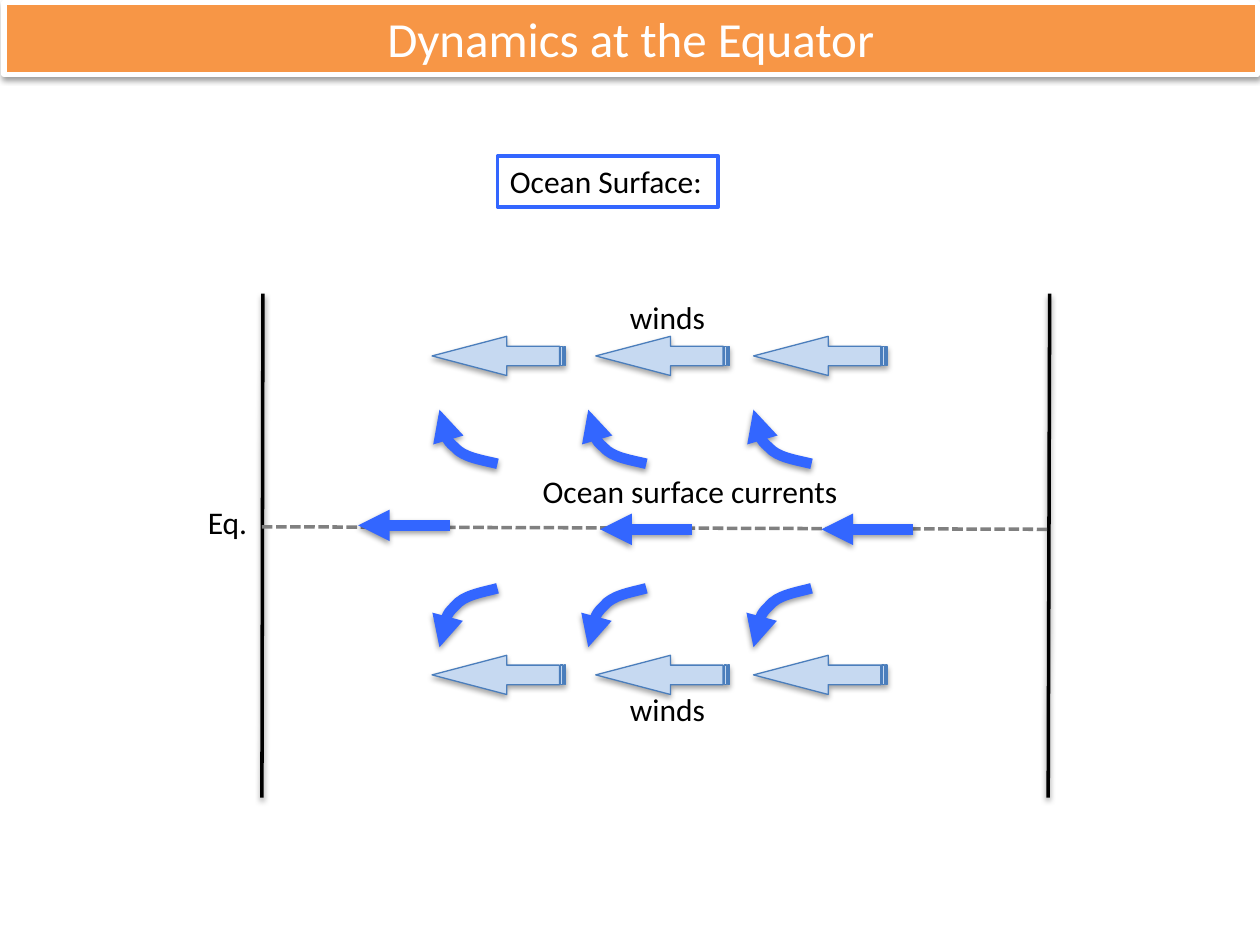
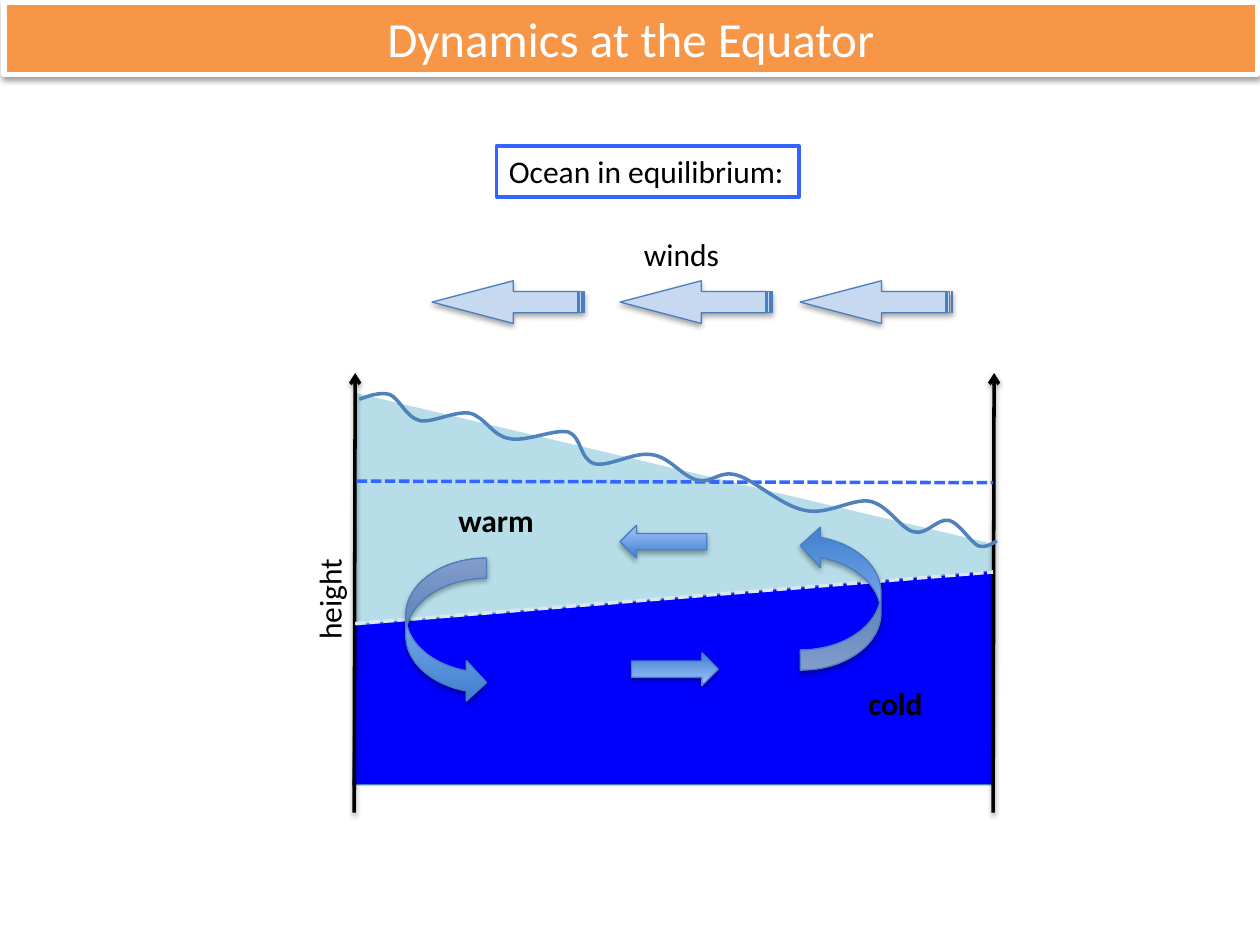
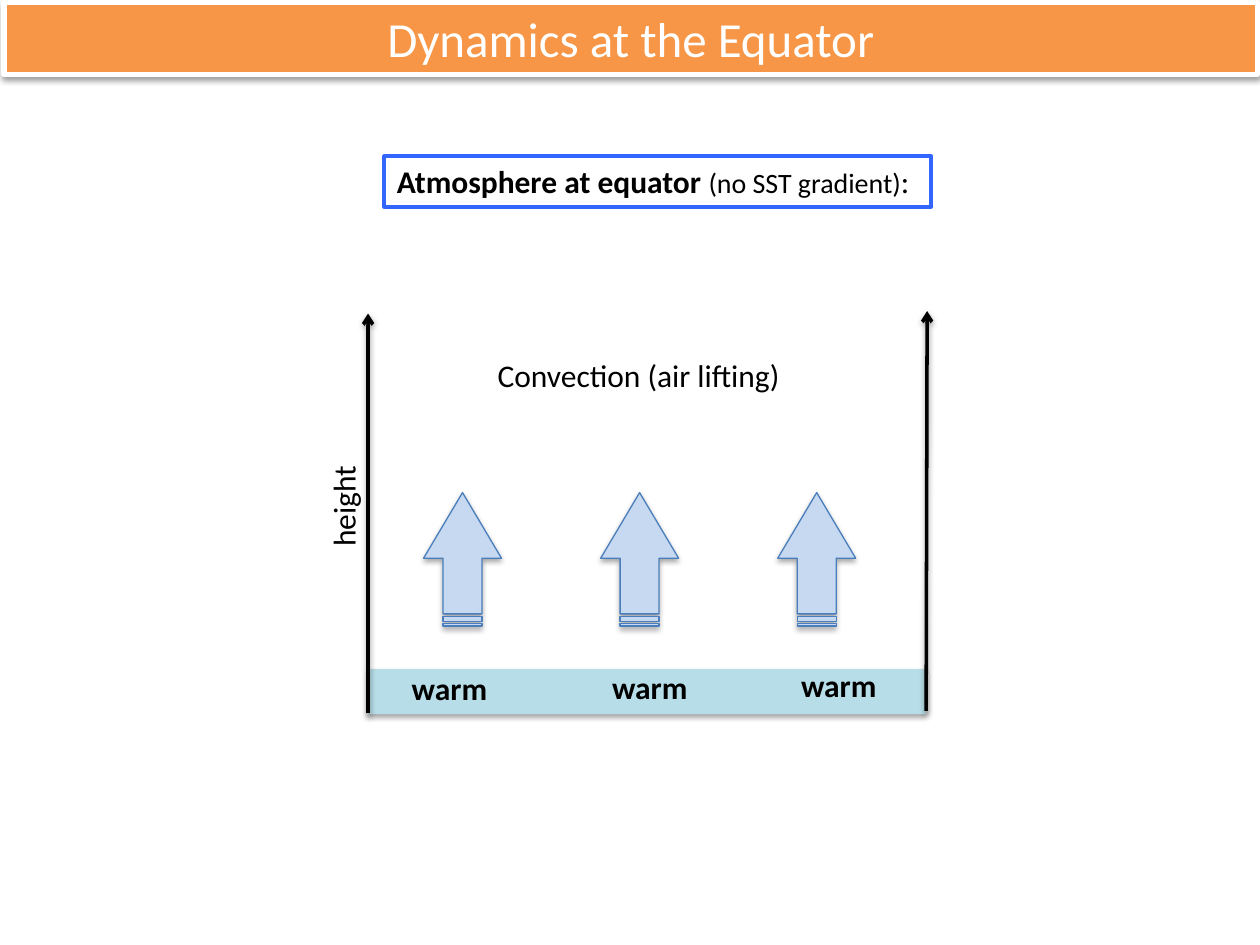
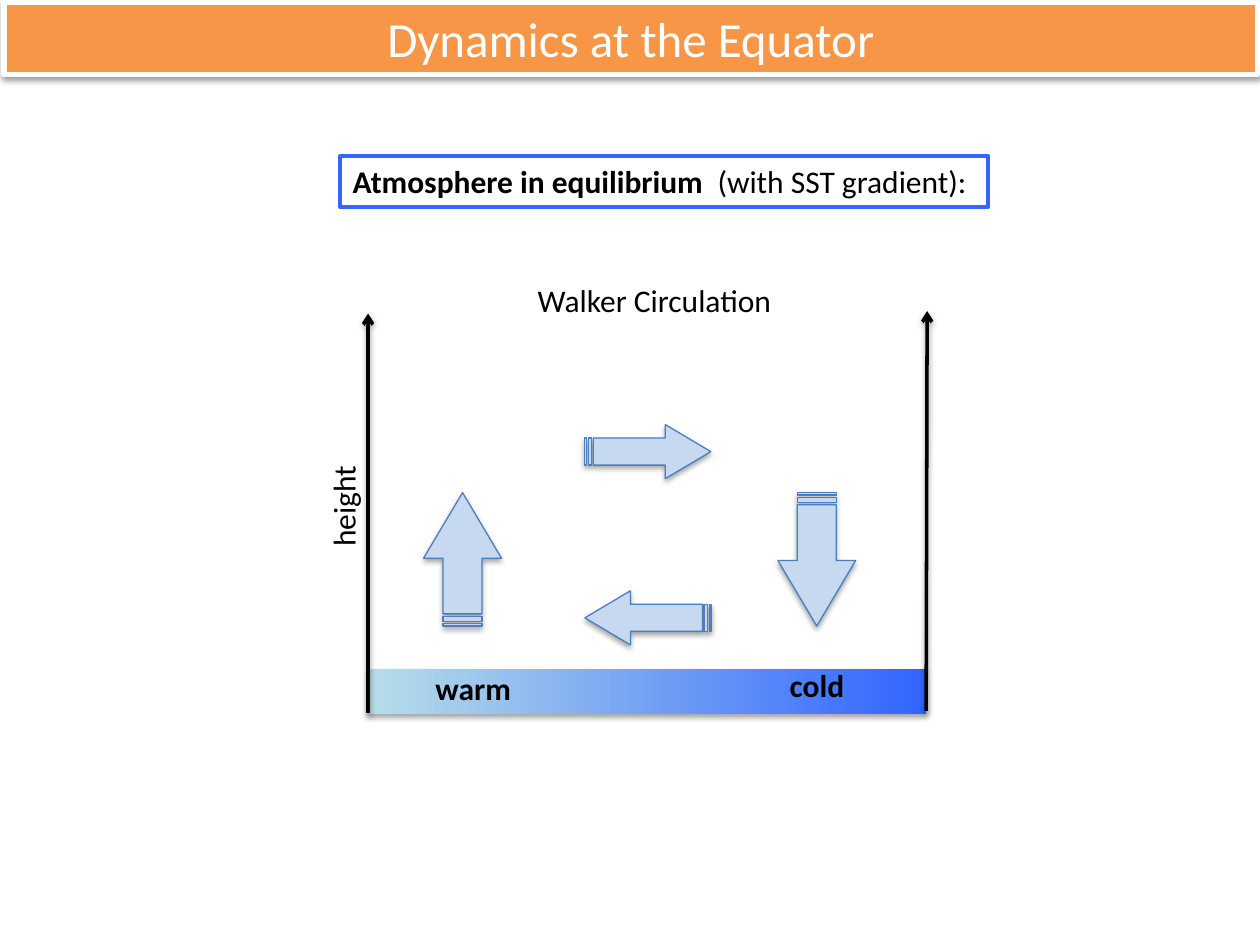
import dataclasses
import math

import lxml.etree
import pptx
import pptx.dml.color
import pptx.enum.dml
import pptx.enum.shapes
import pptx.enum.text
import pptx.oxml.ns
import pptx.util


@dataclasses.dataclass(frozen=True)
class Theme:
    font: str = "Calibri"
    title_size: int = 28
    text_size: int = 18
    small_size: int = 16
    black: str = "000000"
    white: str = "FFFFFF"
    banner: str = "F79646"
    current: str = "3366FF"
    wind: str = "C6D9F1"
    edge: str = "4B7EBC"
    wave: str = "4F81BD"
    equator: str = "808080"
    thermocline: str = "DCE6F2"
    warm: str = "B7DEE8"
    cold: str = "0000FF"
    flow_dark: str = "3F80CE"
    flow_light: str = "A4C4FF"


theme = Theme()
rgb = pptx.dml.color.RGBColor.from_string
qn = pptx.oxml.ns.qn
cm = pptx.util.Cm
preset = pptx.enum.shapes.MSO_SHAPE
straight = pptx.enum.shapes.MSO_CONNECTOR.STRAIGHT
dashed = pptx.enum.dml.MSO_LINE.SQUARE_DOT
left_aligned = pptx.enum.text.PP_ALIGN.LEFT
centred = pptx.enum.text.PP_ALIGN.CENTER


def dress(part, fill=None, angle=0, end=1, line=None, width=0.75, dash=None,
          head=None, tail=None, shadow=None):
    if isinstance(fill, tuple):
        part.fill.gradient()
        part.fill.gradient_angle = angle
        for stop, color, position in zip(part.fill.gradient_stops, fill, (0, end)):
            stop.color.rgb = rgb(color)
            stop.position = position
    elif fill:
        part.fill.solid()
        part.fill.fore_color.rgb = rgb(fill)
    elif hasattr(part, "fill"):
        part.fill.background()
    if line:
        part.line.color.rgb = rgb(line)
        part.line.width = pptx.util.Pt(width)
        if dash:
            part.line.dash_style = dash
    else:
        part.line.fill.background()
    properties = part.element.spPr
    for tag, tip in (("a:headEnd", head), ("a:tailEnd", tail)):
        if tip:
            lxml.etree.SubElement(properties.find(qn("a:ln")), qn(tag), type=tip)
    effects = lxml.etree.SubElement(properties, qn("a:effectLst"))
    if shadow:
        distance, opacity = shadow
        cast = lxml.etree.SubElement(
            effects, qn("a:outerShdw"), blurRad="40000", dist=str(distance),
            dir="5400000", rotWithShape="0")
        tint = lxml.etree.SubElement(cast, qn("a:srgbClr"), val=theme.black)
        lxml.etree.SubElement(tint, qn("a:alpha"), val=str(opacity * 1000))


def write(frame, runs, color=theme.black, align=left_aligned, wrap=False):
    layout = {
        "word_wrap": wrap,
        "auto_size": pptx.enum.text.MSO_AUTO_SIZE.SHAPE_TO_FIT_TEXT,
        "vertical_anchor": pptx.enum.text.MSO_ANCHOR.TOP,
    }
    for name, value in layout.items():
        setattr(frame, name, value)
    paragraph = frame.paragraphs[0]
    paragraph.alignment = align
    for words, size, bold in runs:
        run = paragraph.add_run()
        run.text = words
        run.font.color.rgb = rgb(color)
        for name, value in {"name": theme.font, "size": pptx.util.Pt(size), "bold": bold}.items():
            setattr(run.font, name, value)


line_shadow = (20000, 38)
shape_shadow = (23000, 35)
wall_look = {"line": theme.black, "width": 2, "shadow": line_shadow}
axis_look = {**wall_look, "head": "arrow"}
current_look = {"line": theme.current, "width": 6, "tail": "triangle", "shadow": line_shadow}
wind_look = {"fill": theme.wind, "line": theme.edge, "shadow": shape_shadow}
flow_look = {"fill": (theme.flow_dark, theme.flow_light), "angle": 90,
             "line": theme.edge, "shadow": shape_shadow}

deck = pptx.Presentation()
deck.slide_width = cm(25.4)
deck.slide_height = cm(19.05)

headings = [
    (10.03, 3.15, 4.45, [("Ocean Surface:", theme.text_size, False)]),
    (10.01, 2.95, 6.1, [("Ocean in equilibrium:", theme.text_size, False)]),
    (7.75, 3.15, 11.02, [("Atmosphere at equator ", theme.text_size, True),
                         ("(no SST gradient)", theme.small_size, False),
                         (":", theme.text_size, False)]),
    (6.86, 3.15, 13.06, [("Atmosphere in equilibrium ", theme.text_size, True),
                         (" (with SST gradient):", theme.text_size, False)]),
]
for left, top, width, runs in headings:
    slide = deck.slides.add_slide(deck.slide_layouts[6])
    heading = slide.shapes.add_shape(preset.RECTANGLE, cm(left), cm(top), cm(width), cm(1.02))
    dress(heading, line=theme.current, width=2.25)
    write(heading.text_frame, runs)
surface, ocean, convection, walker = deck.slides

layers = [
    ([(7.16, 7.92), (20.04, 10.97), (20.02, 11.51), (7.16, 12.6)], {"fill": theme.warm}),
    ([(7.16, 12.6), (20.02, 11.51), (20.02, 15.82), (7.11, 15.82)],
     {"fill": theme.cold, "line": theme.edge}),
]
for corners, look in layers:
    outline = [(cm(x), cm(y)) for x, y in corners]
    builder = ocean.shapes.build_freeform(*outline[0])
    builder.add_line_segments(outline[1:], close=True)
    dress(builder.convert_to_shape(), **look)

for slide, sea_fill in ((convection, theme.warm), (walker, (theme.warm, theme.current))):
    sea = slide.shapes.add_shape(preset.RECTANGLE, cm(7.42), cm(13.49), cm(11.25), cm(0.91))
    dress(sea, fill=sea_fill, end=0.99, shadow=shape_shadow)

lines = [
    (surface, 5.3, 5.92, 5.28, 16.08, wall_look),
    (surface, 21.16, 5.92, 21.13, 16.08, wall_look),
    (surface, 5.28, 10.62, 21.11, 10.67, {"line": theme.equator, "width": 2, "dash": dashed}),
    (ocean, 7.16, 7.52, 7.14, 16.38, axis_look),
    (ocean, 20.04, 7.52, 20.02, 16.38, axis_look),
    (ocean, 7.19, 9.7, 20.02, 9.73, {"line": theme.current, "width": 2, "dash": dashed}),
    (ocean, 7.16, 12.57, 20.02, 11.53, {"line": theme.thermocline, "width": 2, "dash": dashed}),
]
for slide in (convection, walker):
    lines += [(slide, 7.42, 6.32, 7.42, 14.38, axis_look),
              (slide, 18.69, 6.27, 18.67, 14.33, axis_look)]
for start, level in ((9.07, 10.59), (13.95, 10.67), (18.41, 10.67)):
    lines.append((surface, start, level, start - 1.85, level, current_look))
for slide, x1, y1, x2, y2, look in lines:
    dress(slide.shapes.add_connector(straight, cm(x1), cm(y1), cm(x2), cm(y2)), **look)

bend = [(0, 0), (-0.33, 0.08), (-0.69, 0.13), (-0.86, 0.33), (-1.07, 0.51), (-1.09, 0.94),
        (-1.14, 1.07), (-1.19, 1.22), (-1.19, 1.17), (-1.17, 1.09)]
curves = []
for level, stretch in ((9.35, -1), (11.86, 1.09)):
    for start in (10.03, 13.03, 16.36):
        points = [(start + dx, level + stretch * dy) for dx, dy in bend]
        curves.append((surface, points, 0, current_look))

sea_surface = [
    (7.24, 8.05), (7.44, 7.98), (7.65, 7.9), (7.85, 7.95), (8.05, 8.03), (8.18, 8.41),
    (8.46, 8.48), (8.71, 8.53), (9.17, 8.28), (9.47, 8.33), (9.78, 8.41), (9.93, 8.79),
    (10.26, 8.84), (10.59, 8.92), (11.18, 8.64), (11.46, 8.71), (11.73, 8.81), (11.68, 9.27),
    (11.99, 9.35), (12.27, 9.42), (12.8, 9.09), (13.16, 9.17), (13.51, 9.22), (13.77, 9.63),
    (14.07, 9.68), (14.35, 9.75), (14.5, 9.47), (14.86, 9.58), (15.21, 9.68), (15.77, 10.21),
    (16.23, 10.29), (16.69, 10.39), (17.2, 10.03), (17.55, 10.11), (17.91, 10.19), (18.16, 10.67),
    (18.42, 10.72), (18.67, 10.8), (18.9, 10.44), (19.13, 10.49), (19.33, 10.54), (19.56, 10.92),
    (19.71, 11), (19.89, 11.07), (20.09, 10.9), (20.09, 10.9),
]
tilt = 13.4
cosine, sine = math.cos(math.radians(tilt)), math.sin(math.radians(tilt))
middle_x, middle_y = 13.67, 9.46
level_surface = [
    (middle_x + (x - middle_x) * cosine + (y - middle_y) * sine,
     middle_y - (x - middle_x) * sine + (y - middle_y) * cosine)
    for x, y in sea_surface
]
curves.append((ocean, level_surface, tilt, {"line": theme.wave, "width": 2}))

for slide, points, rotation, look in curves:
    outline = [(cm(x), cm(y)) for x, y in points]
    builder = slide.shapes.build_freeform(*outline[0])
    builder.add_line_segments(outline[1:], close=False)
    curve = builder.convert_to_shape()
    curve.rotation = rotation
    track = curve.element.find(".//" + qn("a:path"))
    steps = track.findall(qn("a:lnTo"))
    for first in range(0, len(steps), 3):
        bezier = lxml.etree.SubElement(track, qn("a:cubicBezTo"))
        for step in steps[first:first + 3]:
            bezier.append(step[0])
            track.remove(step)
    dress(curve, **look)

winds = [(surface, left, top, 2.69, 0.79, 180, 1.904)
         for top in (6.78, 13.21) for left in (8.71, 12.01, 15.19)]
winds += [(ocean, left, 5.66, 3.07, 0.86, 180, 1.904) for left in (8.71, 12.5, 16.13)]
winds += [(convection, 7.98 + 3.57 * column, 10.49, 2.69, 1.57, 270, 0.842)
          for column in range(3)]
winds += [
    (walker, 7.98, 10.49, 2.69, 1.57, 270, 0.842),
    (walker, 15.12, 10.49, 2.69, 1.57, 90, 0.842),
    (walker, 11.79, 11.91, 2.54, 1.09, 180, 0.842),
    (walker, 11.79, 8.56, 2.54, 1.09, 0, 0.842),
]
for slide, left, top, width, height, rotation, point in winds:
    wind = slide.shapes.add_shape(
        preset.STRIPED_RIGHT_ARROW, cm(left), cm(top), cm(width), cm(height))
    wind.rotation = rotation
    wind.adjustments[1] = point
    dress(wind, **wind_look)

overturning = [
    (preset.CURVED_RIGHT_ARROW, 8.18, 11.25, 1.63, 2.92, 0),
    (preset.CURVED_RIGHT_ARROW, 16.13, 10.59, 1.63, 2.92, 180),
    (preset.LEFT_ARROW, 12.5, 10.59, 1.75, 0.66, 0),
    (preset.LEFT_ARROW, 12.73, 13.16, 1.75, 0.66, 180),
]
for outline, left, top, width, height, rotation in overturning:
    flow = ocean.shapes.add_shape(outline, cm(left), cm(top), cm(width), cm(height))
    flow.rotation = rotation
    dress(flow, **flow_look)

labels = [
    (surface, "Eq.", 3.94, 10.01, 1.32, False, 0),
    (surface, "winds", 12.45, 5.89, 2.06, False, 0),
    (surface, "winds", 12.45, 13.79, 2.06, False, 0),
    (surface, "Ocean surface currents", 10.69, 9.4, 6.55, False, 0),
    (ocean, "height", 5.56, 11.56, 2.16, False, 270),
    (ocean, "warm", 8.99, 9.98, 2.06, True, 0),
    (ocean, "cold", 17.25, 13.67, 1.63, True, 0),
    (ocean, "winds", 12.73, 4.62, 2.06, False, 0),
    (convection, "Convection (air lifting)", 9.78, 7.06, 6.27, False, 0),
    (convection, "height", 5.84, 9.68, 2.16, False, 270),
    (convection, "warm", 8.05, 13.36, 2.06, True, 0),
    (convection, "warm", 12.09, 13.34, 2.06, True, 0),
    (convection, "warm", 15.9, 13.31, 2.06, True, 0),
    (walker, "Walker Circulation", 10.59, 5.54, 5.33, False, 0),
    (walker, "height", 5.84, 9.68, 2.16, False, 270),
    (walker, "warm", 8.53, 13.36, 2.06, True, 0),
    (walker, "cold", 15.67, 13.31, 1.63, True, 0),
]
for slide, words, left, top, width, bold, rotation in labels:
    label = slide.shapes.add_textbox(cm(left), cm(top), cm(width), cm(1.02))
    label.rotation = rotation
    write(label.text_frame, [(words, theme.text_size, bold)])

for slide in deck.slides:
    banner = slide.shapes.add_shape(preset.RECTANGLE, cm(0.08), cm(0.05), cm(25.27), cm(1.45))
    dress(banner, fill=theme.banner, line=theme.white, width=3, shadow=line_shadow)
    write(banner.text_frame, [("Dynamics at the Equator", theme.title_size, False)],
          theme.white, centred, True)

deck.save("out.pptx")
